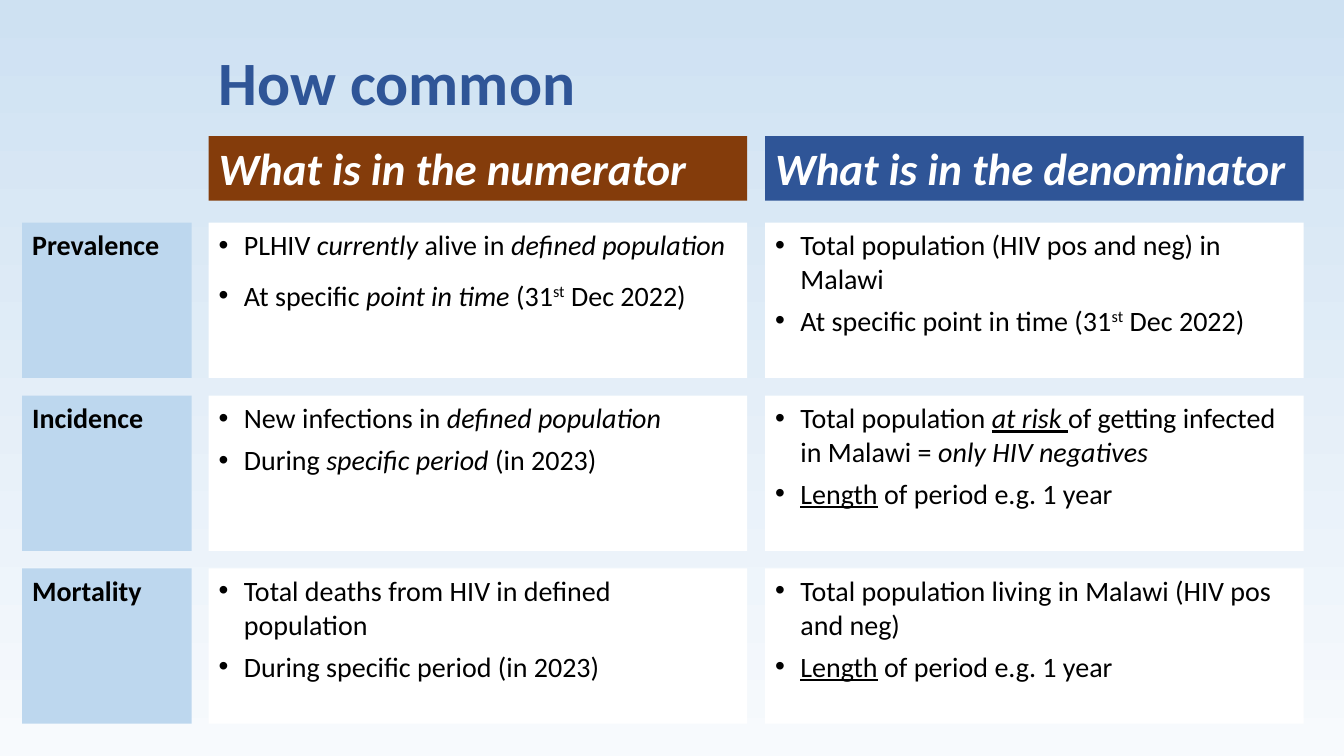
from dataclasses import dataclass

from lxml import etree
from pptx import Presentation
from pptx import util as u
from pptx.dml.color import RGBColor
from pptx.enum import shapes, text
from pptx.oxml.ns import qn


@dataclass(frozen=True)
class Theme:
    font: str = "Calibri"
    blue: str = "2F5597"
    brown: str = "843C0B"
    pale_blue: str = "BDD7EE"
    white: str = "FFFFFF"
    black: str = "000000"
    sky: tuple = ("F7FAFD", "CEE1F2")
    title: int = 44
    heading: int = 32
    body: int = 20


THEME = Theme()

LABEL_LEFT, LABEL_WIDTH = 0.22, 1.68
COLUMN_LEFTS, COLUMN_WIDTH = (2.07, 7.59), 5.34
HEADING_TOP, HEADING_HEIGHT = 1.35, 0.64
FIRST_ROW, ROW_PITCH, ROW_HEIGHT = 2.21, 1.715, 1.54

ITALIC = {"italic": True}
UNDERLINE = {"underline": True}
SUPERSCRIPT = {"baseline": 30000}

HEADINGS = (("What is in the numerator", THEME.brown),
            ("What is in the denominator", THEME.blue))
PERIOD_LENGTH = [("Length", UNDERLINE), " of period e.g. 1 year"]

# Each row: label, then (space after, bullets) for numerator and denominator
ROWS = [
    ("Prevalence",
     (12, [["PLHIV ", ("currently", ITALIC), " alive in ", ("defined population", ITALIC)],
           ["At specific ", ("point in time ", ITALIC), "(31", ("st", SUPERSCRIPT),
            " Dec 2022)"]]),
     (6, [["Total population (HIV pos and neg) in Malawi"],
          ["At specific point in time (31", ("st", SUPERSCRIPT), " Dec 2022)"]])),
    ("Incidence",
     (6, [["New infections in ", ("defined population", ITALIC)],
          ["During ", ("specific period ", ITALIC), "(in 2023)"]]),
     (6, [["Total population ", ("at risk ", ITALIC | UNDERLINE),
           "of getting infected in Malawi = ", ("only HIV negatives", ITALIC)],
          PERIOD_LENGTH])),
    ("Mortality",
     (6, [["Total deaths from HIV in defined population"],
          ["During specific period (in 2023)"]]),
     (6, [["Total population living in Malawi (HIV pos and neg)"],
          PERIOD_LENGTH])),
]


def paint_background(slide):
    fill = slide.background.fill
    fill.gradient()
    fill.gradient_angle = 90
    for stop, color, position in zip(fill.gradient_stops, THEME.sky, (0, 1)):
        stop.color.rgb = RGBColor.from_string(color)
        stop.position = position


def add_panel(slide, box, color):
    panel = slide.shapes.add_shape(shapes.MSO_SHAPE.RECTANGLE, *map(u.Inches, box))
    panel.shadow.inherit = False
    panel.fill.solid()
    panel.fill.fore_color.rgb = RGBColor.from_string(color)
    panel.line.fill.background()
    return panel


def add_run(paragraph, piece, size, color, style):
    """Add a plain string or a (words, style) pair."""
    words, extra = (piece, {}) if isinstance(piece, str) else piece
    run = paragraph.add_run()
    run.text = words
    run.font.color.rgb = RGBColor.from_string(color)
    values = {"name": THEME.font, "size": u.Pt(size)} | style | extra
    baseline = values.pop("baseline", None)
    for name, value in values.items():
        setattr(run.font, name, value)
    if baseline:
        run.font._element.set("baseline", str(baseline))


def add_bullet(paragraph):
    properties = paragraph._p.get_or_add_pPr()
    indent = u.Inches(0.25)
    properties.set("marL", str(indent))
    properties.set("indent", str(-indent))
    etree.SubElement(properties, qn("a:buFont"), typeface="Arial")
    etree.SubElement(properties, qn("a:buChar"), char="•")


def write(holder, paragraphs, size, color, anchor=text.MSO_ANCHOR.TOP,
          style=None, spacing=None, bulleted=False):
    frame = holder.text_frame
    frame.word_wrap = True
    frame.vertical_anchor = anchor
    for index, pieces in enumerate(paragraphs):
        paragraph = frame.add_paragraph() if index else frame.paragraphs[0]
        paragraph.alignment = text.PP_ALIGN.LEFT
        for name, value in (spacing or {}).items():
            setattr(paragraph, name, value)
        if bulleted:
            add_bullet(paragraph)
        for piece in pieces:
            add_run(paragraph, piece, size, color, style or {})


def add_title(slide, words):
    title = slide.shapes.add_textbox(*map(u.Inches, (COLUMN_LEFTS[0], 0.4, 10.34, 0.9)))
    write(title, [[words]], THEME.title, THEME.blue, text.MSO_ANCHOR.MIDDLE,
          {"bold": True}, {"line_spacing": 0.9})


def add_heading(slide, left, words, color):
    heading = add_panel(slide, (left, HEADING_TOP, COLUMN_WIDTH, HEADING_HEIGHT), color)
    write(heading, [[words]], THEME.heading, THEME.white, text.MSO_ANCHOR.BOTTOM,
          {"bold": True} | ITALIC, {"line_spacing": 0.9, "space_before": u.Pt(10)})


def add_measure(slide, top, label, cells):
    name = add_panel(slide, (LABEL_LEFT, top, LABEL_WIDTH, ROW_HEIGHT), THEME.pale_blue)
    write(name, [[label]], THEME.body, THEME.black,
          style={"bold": True}, spacing={"space_after": u.Pt(12)})
    for left, (gap, bullets) in zip(COLUMN_LEFTS, cells):
        cell = add_panel(slide, (left, top, COLUMN_WIDTH, ROW_HEIGHT), THEME.white)
        write(cell, bullets, THEME.body, THEME.black,
              spacing={"space_after": u.Pt(gap)}, bulleted=True)


def main():
    deck = Presentation()
    deck.slide_width, deck.slide_height = u.Inches(13.33), u.Inches(7.5)
    slide = deck.slides.add_slide(deck.slide_layouts[6])
    paint_background(slide)
    add_title(slide, "How common")
    for left, (words, color) in zip(COLUMN_LEFTS, HEADINGS):
        add_heading(slide, left, words, color)
    for index, (label, *cells) in enumerate(ROWS):
        add_measure(slide, FIRST_ROW + index * ROW_PITCH, label, cells)
    deck.save("out.pptx")


if __name__ == "__main__":
    main()
